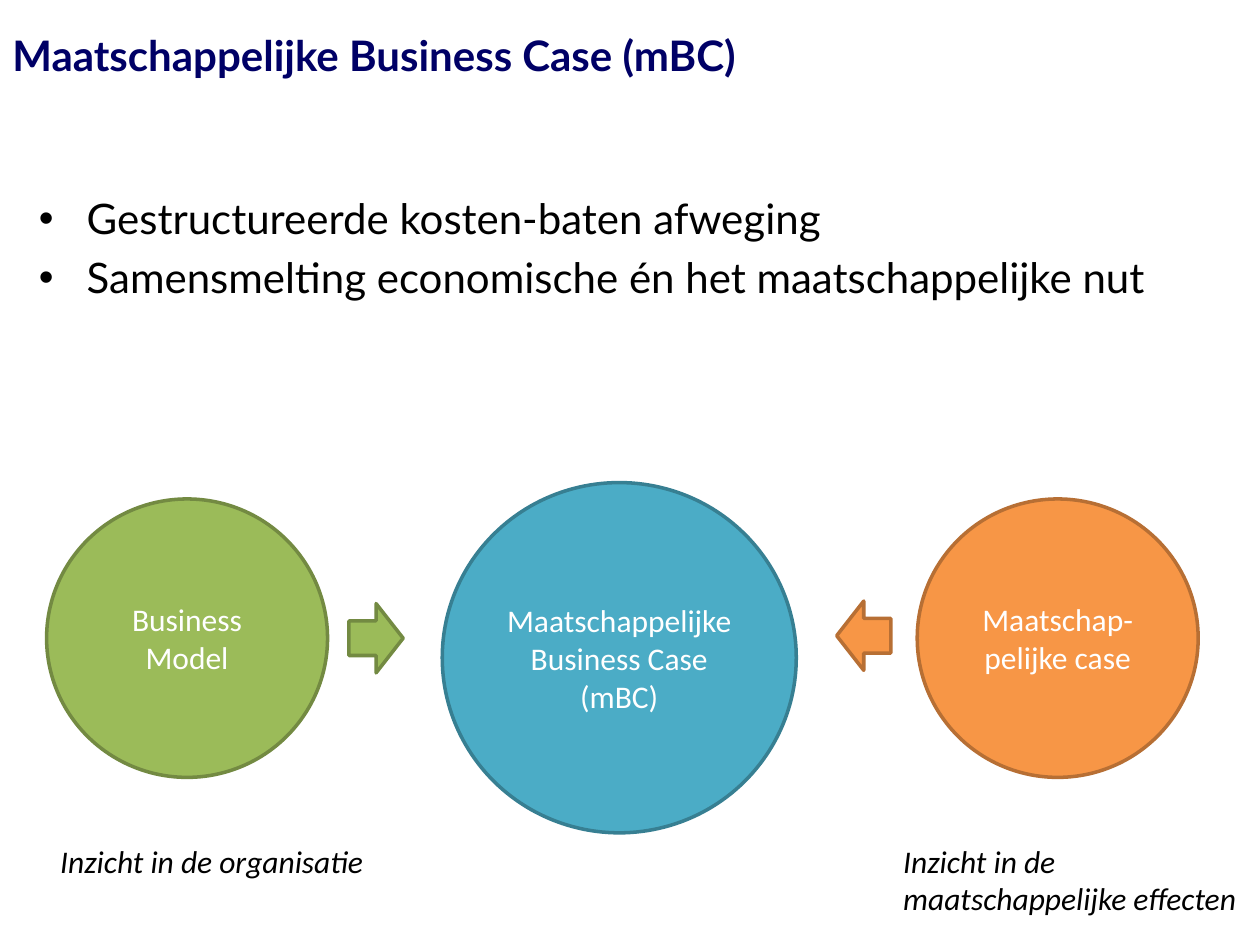
"""Build the slide on the societal business case (mBC)."""
from dataclasses import dataclass

from lxml import etree
from pptx import Presentation
from pptx.dml.color import RGBColor
from pptx.enum.shapes import MSO_SHAPE as Shape
from pptx.enum.text import MSO_ANCHOR as Anchor, PP_ALIGN as Align
from pptx.oxml.ns import qn
from pptx.util import Inches, Pt


@dataclass(frozen=True)
class Area:
    left: float
    top: float
    width: float
    height: float

    def lengths(self):
        return [Inches(n) for n in (self.left, self.top, self.width, self.height)]


@dataclass(frozen=True)
class Palette:
    fill: str
    line: str


@dataclass(frozen=True)
class Circle:
    text: str
    area: Area
    palette: Palette


@dataclass(frozen=True)
class Arrow:
    area: Area
    palette: Palette
    rotation: int


@dataclass(frozen=True)
class Label:
    lines: tuple[str, ...]
    area: Area
    font: str = "Calibri"
    size: int = 18
    color: str = "000000"
    bold: bool = False
    italic: bool = False
    wrap: bool = True
    bullets: bool = False
    anchor: Anchor = Anchor.TOP


GREEN = Palette("9BBB59", "738A42")
BLUE = Palette("4BACC6", "377F92")
ORANGE = Palette("F79646", "B76F34")

CIRCLES = (
    Circle("Maatschappelijke Business Case (mBC)", Area(3.51, 3.83, 2.81, 2.78), BLUE),
    Circle("Business Model", Area(0.37, 3.96, 2.23, 2.21), GREEN),
    Circle("Maatschap-pelijke case", Area(7.28, 3.96, 2.23, 2.21), ORANGE),
)
ARROWS = (
    Arrow(Area(2.77, 4.79, 0.43, 0.55), GREEN, 0),
    Arrow(Area(6.64, 4.77, 0.43, 0.55), ORANGE, 180),
)
LABELS = (
    Label(("Maatschappelijke Business Case (mBC)",), Area(0, 0.08, 7.16, 0.71),
          font="Lato", size=24, color="000066", bold=True, anchor=Anchor.MIDDLE),
    Label(("Gestructureerde kosten-baten afweging",
           "Samensmelting economische én het maatschappelijke nut"),
          Area(0.21, 1.48, 9.21, 1.47), font="Lato", size=24, bullets=True),
    Label(("Inzicht in de organisatie",), Area(0.38, 6.63, 2.63, 0.4),
          italic=True, wrap=False),
    Label(("Inzicht in de", "maatschappelijke effecten"), Area(7.07, 6.63, 2.88, 0.71),
          italic=True, wrap=False),
)


def rgb(value: str) -> RGBColor:
    return RGBColor.from_string(value)


def style_font(font, name: str, size: int, color: str) -> None:
    font.name = name
    font.size = Pt(size)
    font.color.rgb = rgb(color)


def add_bullet(para) -> None:
    properties = para._p.get_or_add_pPr()
    properties.set("marL", str(Inches(0.38)))
    properties.set("indent", str(-Inches(0.38)))
    etree.SubElement(properties, qn("a:buFont")).set("typeface", "Arial")
    etree.SubElement(properties, qn("a:buChar")).set("char", "•")


def draw_shape(page, kind: Shape, area: Area, palette: Palette):
    shape = page.shapes.add_shape(kind, *area.lengths())
    shape.shadow.inherit = False
    shape.fill.solid()
    shape.fill.fore_color.rgb = rgb(palette.fill)
    shape.line.color.rgb = rgb(palette.line)
    shape.line.width = Pt(2)
    return shape


def draw_circle(page, circle: Circle) -> None:
    frame = draw_shape(page, Shape.OVAL, circle.area, circle.palette).text_frame
    frame.text = circle.text
    frame.word_wrap = True
    frame.vertical_anchor = Anchor.MIDDLE
    para = frame.paragraphs[0]
    para.alignment = Align.CENTER
    style_font(para.runs[0].font, "Calibri", 18, "FFFFFF")


def draw_arrow(page, arrow: Arrow) -> None:
    shape = draw_shape(page, Shape.RIGHT_ARROW, arrow.area, arrow.palette)
    shape.rotation = arrow.rotation


def draw_label(page, label: Label) -> None:
    frame = page.shapes.add_textbox(*label.area.lengths()).text_frame
    frame.text = "\n".join(label.lines)
    frame.word_wrap = label.wrap
    frame.vertical_anchor = label.anchor
    for index, para in enumerate(frame.paragraphs):
        if label.bullets:
            add_bullet(para)
            if index:
                para.space_before = Pt(0.2 * label.size)
        font = para.runs[0].font
        style_font(font, label.font, label.size, label.color)
        font.bold = label.bold
        font.italic = label.italic


def main() -> None:
    deck = Presentation()
    deck.slide_width, deck.slide_height = Inches(10), Inches(7.5)
    page = deck.slides.add_slide(deck.slide_layouts[6])
    for circle in CIRCLES:
        draw_circle(page, circle)
    for arrow in ARROWS:
        draw_arrow(page, arrow)
    for label in LABELS:
        draw_label(page, label)
    deck.save("out.pptx")


if __name__ == "__main__":
    main()
